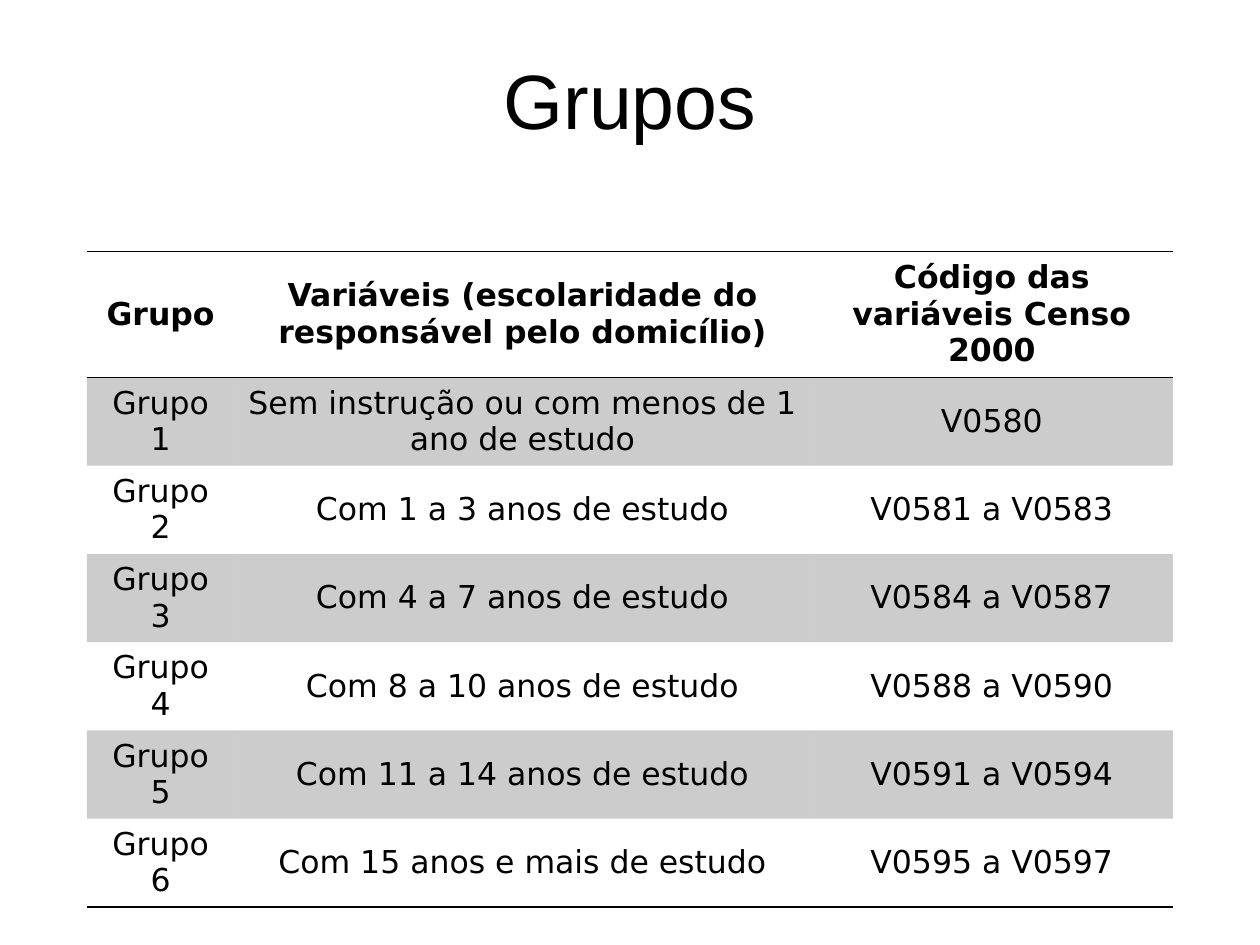
from lxml import etree
from pptx import Presentation
from pptx.dml.color import RGBColor
from pptx.enum.text import MSO_ANCHOR, PP_ALIGN
from pptx.oxml.ns import qn
from pptx.util import Pt

BLACK = RGBColor(0x00, 0x00, 0x00)
CENTER = PP_ALIGN.CENTER
TOP, MIDDLE = MSO_ANCHOR.TOP, MSO_ANCHOR.MIDDLE
PLAIN_STYLE = "{2D5ABB26-0587-4C30-8999-92F81FD0307C}"  # no style, no grid

ROWS = [
    ("Grupo", "Variáveis (escolaridade do responsável pelo domicílio)",
     "Código das variáveis Censo 2000"),
    ("Grupo 1", "Sem instrução ou com menos de 1 ano de estudo", "V0580"),
    ("Grupo 2", "Com 1 a 3 anos de estudo", "V0581 a V0583"),
    ("Grupo 3", "Com 4 a 7 anos de estudo", "V0584 a V0587"),
    ("Grupo 4", "Com 8 a 10 anos de estudo", "V0588 a V0590"),
    ("Grupo 5", "Com 11 a 14 anos de estudo", "V0591 a V0594"),
    ("Grupo 6", "Com 15 anos e mais de estudo", "V0595 a V0597"),
]
COLUMN_WIDTHS = [84.2, 329.4, 207]
ROW_HEIGHTS = [50.4] * 2 + [42.5] * 5


def write(frame, text, font, size, bold=False):
    para = frame.paragraphs[0]
    para.alignment = CENTER
    span = para.add_run()
    span.text = text
    span.font.name = font
    span.font.size = Pt(size)
    span.font.bold = bold
    span.font.color.rgb = BLACK


def rule(cell, side):
    line = etree.SubElement(cell._tc.get_or_add_tcPr(), qn("a:" + side), w=str(Pt(1)))
    fill = etree.SubElement(line, qn("a:solidFill"))
    etree.SubElement(fill, qn("a:srgbClr"), val=str(BLACK))


deck = Presentation()
deck.slide_width, deck.slide_height = Pt(720), Pt(540)
page = deck.slides.add_slide(deck.slide_layouts[6])

# Title
title = page.shapes.add_textbox(Pt(36), Pt(21.6), Pt(648), Pt(90)).text_frame
title.word_wrap = True
title.vertical_anchor = TOP
title.margin_top = Pt(8.3)
write(title, "Grupos", "Arial", 44)

# Table of groups
frame = page.shapes.add_table(len(ROWS), len(COLUMN_WIDTHS), Pt(49.7), Pt(143.6),
                              Pt(sum(COLUMN_WIDTHS)), Pt(sum(ROW_HEIGHTS)))
table = frame.table
table._tbl.tblPr.find(qn("a:tableStyleId")).text = PLAIN_STYLE
for column, width in zip(table.columns, COLUMN_WIDTHS):
    column.width = Pt(width)
for row, height in zip(table.rows, ROW_HEIGHTS):
    row.height = Pt(height)

last = len(ROWS) - 1
for r, texts in enumerate(ROWS):
    for c, text in enumerate(texts):
        cell = table.cell(r, c)
        cell.vertical_anchor = MIDDLE
        write(cell.text_frame, text, "DejaVu Sans", 18, bold=r == 0)

        # Rules above and below the header, and under the last row
        if r == 0:
            rule(cell, "lnT")
        if r in (0, last):
            rule(cell, "lnB")

        # Odd rows are shaded with 20 % black
        if r % 2:
            cell.fill.solid()
            cell.fill.fore_color.rgb = BLACK
            color = cell._tc.tcPr.find(qn("a:solidFill")).find(qn("a:srgbClr"))
            etree.SubElement(color, qn("a:alpha"), val="20000")
        else:
            cell.fill.background()

deck.save("out.pptx")
